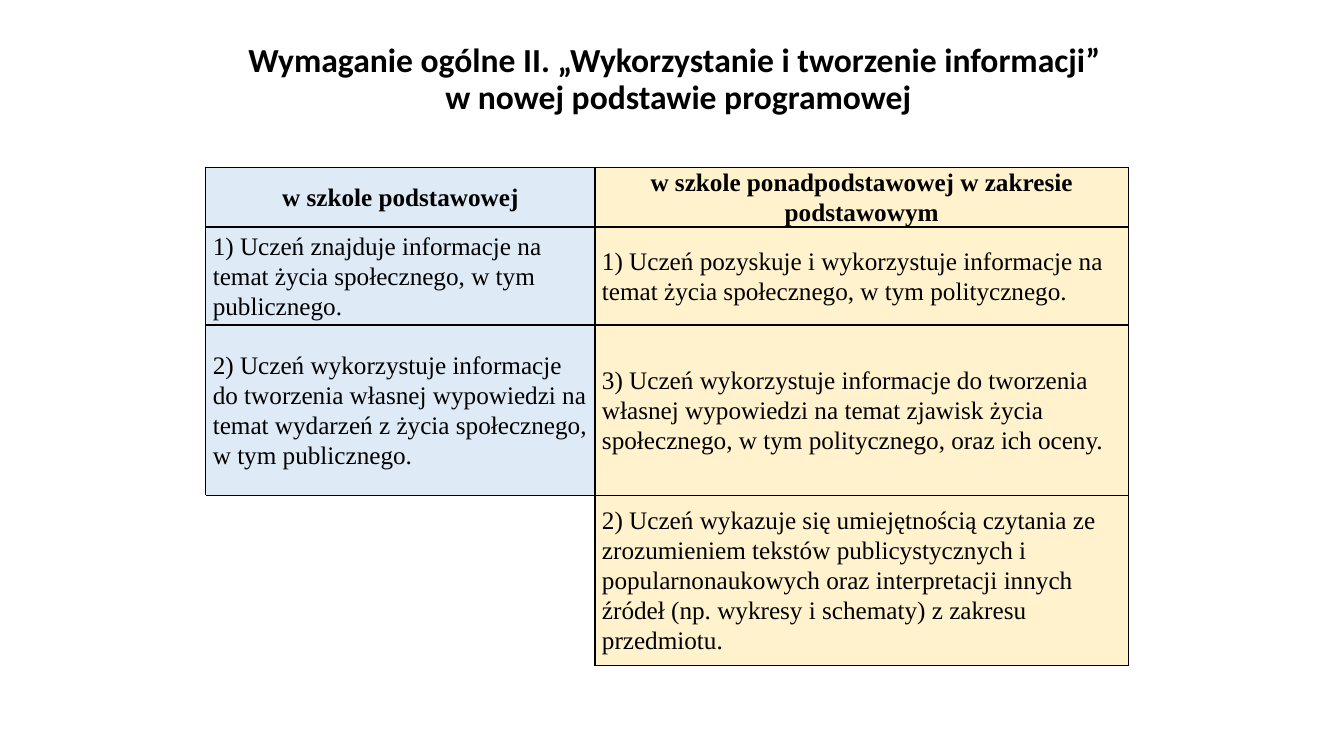
from dataclasses import dataclass

from lxml.etree import SubElement
from pptx import Presentation
from pptx.dml.color import RGBColor
from pptx.enum.text import MSO_ANCHOR as Anchor, PP_ALIGN as Align
from pptx.oxml.ns import qn
from pptx.util import Pt

COLORS = {"text": "000000", "border": "000000", "primary": "DEEBF7", "secondary": "FFF2CC"}
COLUMNS = ("primary", "secondary")
COL_WIDTHS = (278, 381)
TITLE_LINES = (
    "Wymaganie ogólne II. „Wykorzystanie i tworzenie informacji” ",
    "w nowej podstawie programowej",
)


@dataclass
class Row:
    height: float
    texts: tuple[str, str]
    header: bool = False


ROWS = [
    Row(33, ("w szkole podstawowej",
             "w szkole ponadpodstawowej w zakresie podstawowym"), header=True),
    Row(70, ("1) Uczeń znajduje informacje na temat życia społecznego, w tym publicznego.",
             "1) Uczeń pozyskuje i wykorzystuje informacje na temat życia społecznego, "
             "w tym politycznego.")),
    Row(121.5, ("2) Uczeń wykorzystuje informacje do tworzenia własnej wypowiedzi na temat "
                "wydarzeń z życia społecznego, w tym publicznego.",
                "3) Uczeń wykorzystuje informacje do tworzenia własnej wypowiedzi na temat "
                "zjawisk życia społecznego, w tym politycznego, oraz ich oceny.")),
    Row(121.5, ("",
                "2) Uczeń wykazuje się umiejętnością czytania ze zrozumieniem tekstów "
                "publicystycznych i popularnonaukowych oraz interpretacji innych źródeł "
                "(np. wykresy i schematy) z zakresu przedmiotu.")),
]


def set_font(p, name: str, size: float, bold: bool) -> None:
    p.font.name, p.font.size, p.font.bold = name, Pt(size), bold
    p.font.color.rgb = RGBColor.from_string(COLORS["text"])


def set_borders(cell, sides: str) -> None:
    tc_pr = cell._tc.get_or_add_tcPr()
    for side in sides:
        ln = SubElement(tc_pr, qn(f"a:ln{side}"), w=str(Pt(1)))
        fill = SubElement(ln, qn("a:solidFill"))
        SubElement(fill, qn("a:srgbClr"), val=COLORS["border"])


def fill_cell(cell, text: str, color: str, header: bool) -> None:
    # Borders come before the fill in the cell properties
    set_borders(cell, "LRTB" if text else "RT")
    if not text:
        cell.fill.background()
        return
    cell.fill.solid()
    cell.fill.fore_color.rgb = RGBColor.from_string(COLORS[color])
    cell.vertical_anchor = Anchor.MIDDLE
    cell.margin_left = cell.margin_right = Pt(5)
    cell.margin_top = cell.margin_bottom = Pt(0)
    cell.text = text
    p = cell.text_frame.paragraphs[0]
    p.alignment = Align.CENTER if header else Align.LEFT
    p.line_spacing = 1.07
    set_font(p, "Times New Roman", 18, header)


def add_title(s) -> None:
    sp = s.shapes.title
    sp.left, sp.top, sp.width, sp.height = Pt(70.5), Pt(5), Pt(828), Pt(104.5)
    tf = sp.text_frame
    tf.vertical_anchor = Anchor.MIDDLE
    p = tf.paragraphs[0]
    p.add_run().text = TITLE_LINES[0]
    p.add_line_break()
    p.add_run().text = TITLE_LINES[1]
    p.alignment = Align.CENTER
    p.line_spacing = 0.9
    set_font(p, "Calibri", 24, True)


def add_requirements(s) -> None:
    table = s.shapes.add_table(
        len(ROWS), len(COLUMNS), Pt(147), Pt(119.5),
        Pt(sum(COL_WIDTHS)), Pt(sum(row.height for row in ROWS)),
    ).table
    table.first_row = table.horz_banding = False
    for column, width in zip(table.columns, COL_WIDTHS):
        column.width = Pt(width)
    for i, row in enumerate(ROWS):
        table.rows[i].height = Pt(row.height)
        for j, (text, color) in enumerate(zip(row.texts, COLUMNS)):
            fill_cell(table.cell(i, j), text, color, row.header)


def main() -> None:
    prs = Presentation()
    prs.slide_width, prs.slide_height = Pt(960), Pt(540)
    s = prs.slides.add_slide(prs.slide_layouts.get_by_name("Title Only"))
    add_title(s)
    add_requirements(s)
    prs.save("out.pptx")


if __name__ == "__main__":
    main()
